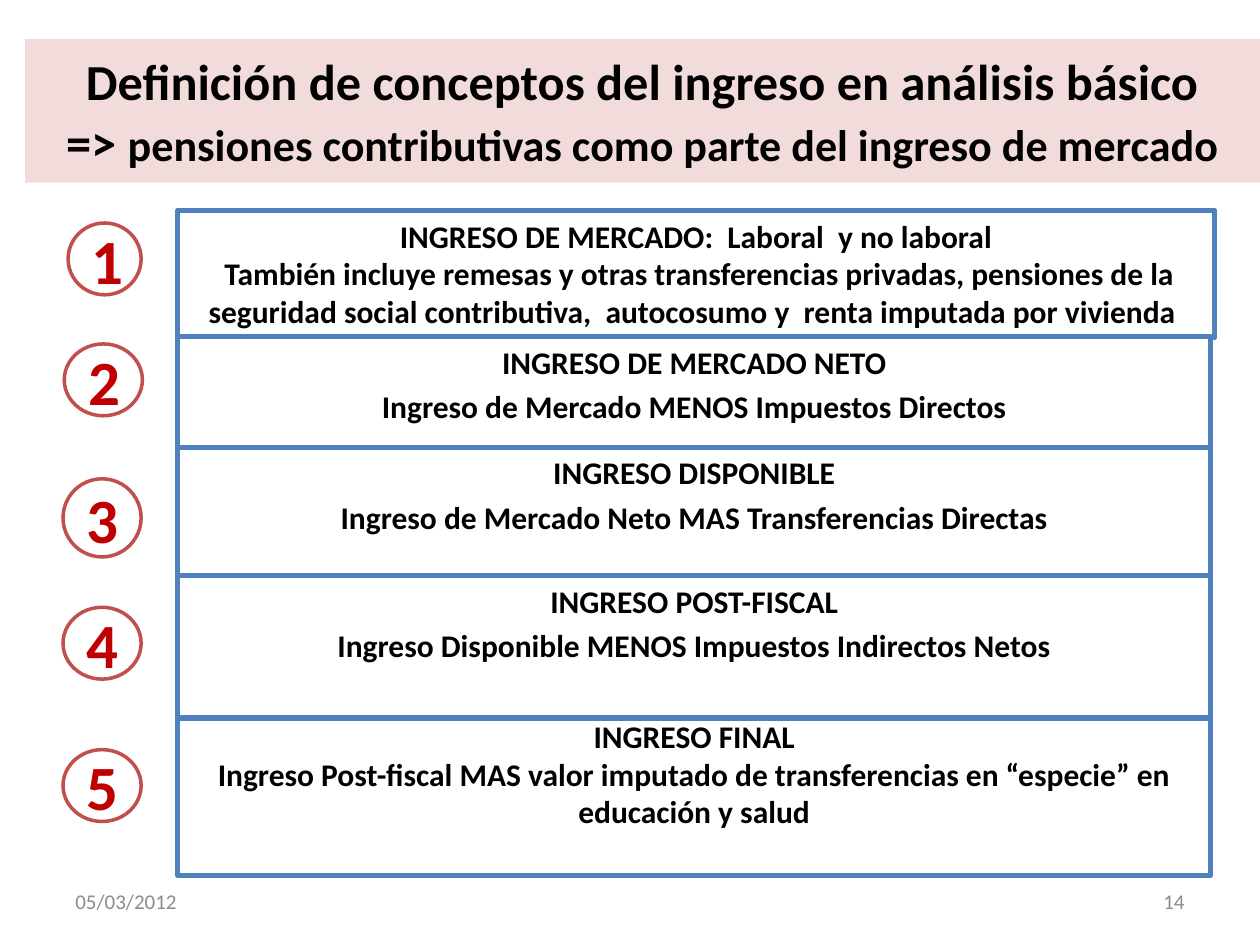
from pptx import Presentation
from pptx import util as u
from pptx.dml import color
from pptx.enum import shapes, text

HUES = {"pink": "F2DCDB", "white": "FFFFFF", "blue": "4F81BD", "ring": "C0504D",
        "red": "C00000", "black": "000000", "gray": "8C8C8C"}
ALIGN = text.PP_ALIGN
ANCHOR = text.MSO_ANCHOR


def hue(name):
    return color.RGBColor.from_string(HUES[name])


def write(item, paras, size=18, ink="black", bold=True, align=ALIGN.CENTER,
          anchor=ANCHOR.MIDDLE, before=0):
    """Fill an item with paragraphs, each a list of strings or (string, size)."""
    frame = item.text_frame
    frame.word_wrap = True
    frame.vertical_anchor = anchor
    for i, runs in enumerate(paras):
        para = frame.paragraphs[0] if i == 0 else frame.add_paragraph()
        para.alignment = align
        para.space_before = u.Pt(before)
        for part in runs:
            words, pts = part if isinstance(part, tuple) else (part, size)
            if words == "\n":
                para.add_line_break()
                continue
            run = para.add_run()
            run.text = words
            run.font.name = "Calibri"
            run.font.size = u.Pt(pts)
            run.font.bold = bold
            run.font.color.rgb = hue(ink)


deck = Presentation()
deck.slide_width, deck.slide_height = u.Inches(10), u.Inches(7.5)
slide = deck.slides.add_slide(deck.slide_layouts[6])
items = slide.shapes

# Title band
band = items.add_shape(shapes.MSO_SHAPE.RECTANGLE, u.Inches(0.2), u.Inches(0.31),
                       u.Inches(9.8), u.Inches(1.14))
band.shadow.inherit = False
band.fill.solid()
band.fill.fore_color.rgb = hue("pink")
band.line.fill.background()
write(band, [["Definición de conceptos del ingreso en análisis básico", "\n", "=> ",
              ("pensiones contributivas como parte del ingreso de mercado", 25.2)]],
      size=28.8)

# Income boxes, back to front: top, width, height, space before, head, body
boxes = [
    (1.67, 8.23, 1.01, 0, "INGRESO DE MERCADO:  Laboral  y no laboral",
     " También incluye remesas y otras transferencias privadas, pensiones de la "
     "seguridad social contributiva,  autocosumo y  renta imputada por vivienda "),
    (2.67, 8.2, 1.13, 3.6, "INGRESO DE MERCADO NETO",
     "Ingreso de Mercado MENOS Impuestos Directos"),
    (5.64, 8.2, 1.31, 0, "INGRESO FINAL",
     "Ingreso Post-fiscal MAS valor imputado de transferencias en “especie” en "
     "educación y salud"),
    (3.55, 8.2, 1.13, 3.6, "INGRESO DISPONIBLE",
     "Ingreso de Mercado Neto MAS Transferencias Directas"),
    (4.57, 8.2, 1.13, 3.6, "INGRESO POST-FISCAL",
     "Ingreso Disponible MENOS Impuestos Indirectos Netos"),
]
for top, wide, high, gap, head, body in boxes:
    box = items.add_shape(shapes.MSO_SHAPE.RECTANGLE, u.Inches(1.41), u.Inches(top),
                          u.Inches(wide), u.Inches(high))
    box.shadow.inherit = False
    box.fill.solid()
    box.fill.fore_color.rgb = hue("white")
    box.line.color.rgb = hue("blue")
    box.line.width = u.Pt(3)
    write(box, [[head], [body]], anchor=ANCHOR.TOP, before=gap)

# Numbered rings
rings = [(0.54, 1.77, 0.58, 0.57), (0.51, 2.73, 0.62, 0.57), (0.5, 3.8, 0.62, 0.62),
         (0.5, 4.82, 0.62, 0.57), (0.5, 5.95, 0.62, 0.57)]
for num, spot in enumerate(rings, 1):
    ring = items.add_shape(shapes.MSO_SHAPE.OVAL, *map(u.Inches, spot))
    ring.shadow.inherit = False
    ring.fill.background()
    ring.line.color.rgb = hue("ring")
    ring.line.width = u.Pt(2)
    write(ring, [[str(num)]], size=36, ink="red")

# Footer: date and page number
for left, words, side in [(0.5, "05/03/2012", ALIGN.LEFT), (7.17, "14", ALIGN.RIGHT)]:
    foot = items.add_textbox(u.Inches(left), u.Inches(6.95), u.Inches(2.33), u.Inches(0.4))
    write(foot, [[words]], size=12, ink="gray", bold=False, align=side)

deck.save("out.pptx")
